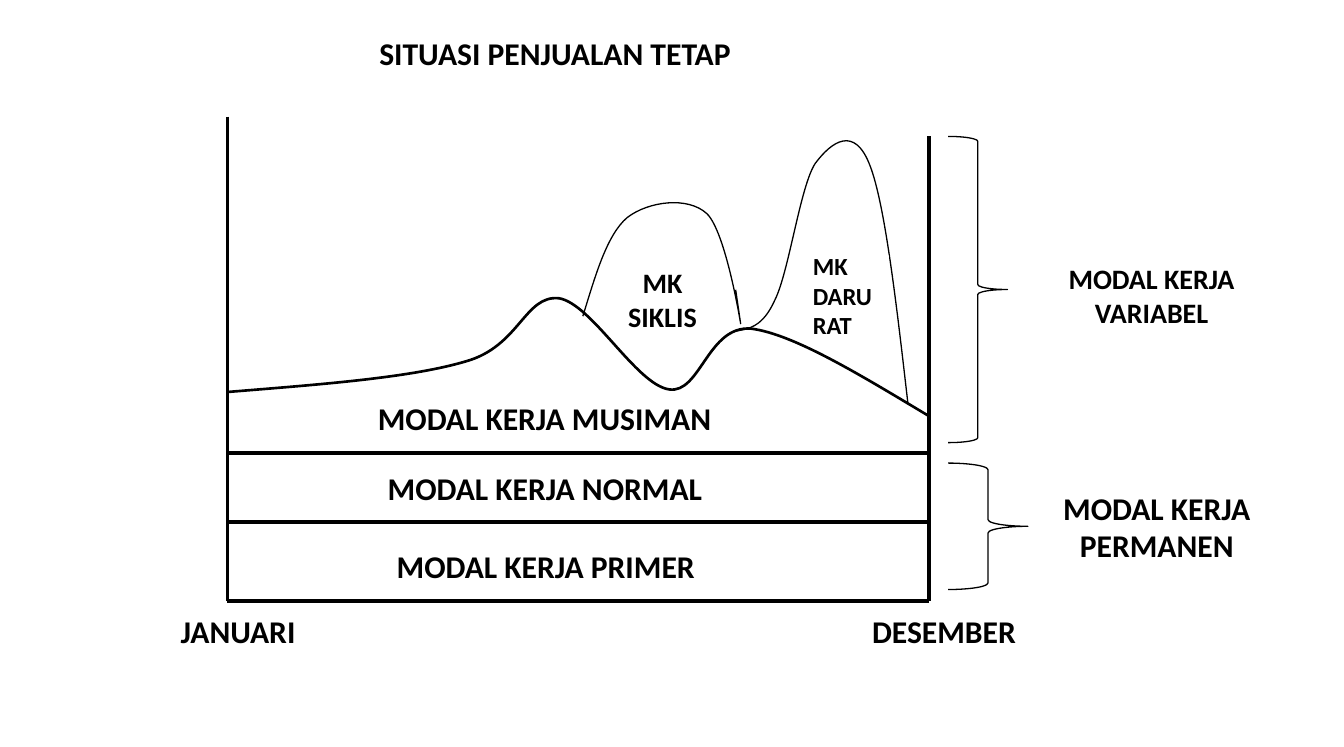
import lxml.etree
import pptx
import pptx.dml.color
import pptx.enum.shapes
import pptx.enum.text
import pptx.oxml.ns
import pptx.util

Cm = pptx.util.Cm
Pt = pptx.util.Pt
qn = pptx.oxml.ns.qn
Shape = pptx.enum.shapes.MSO_SHAPE
Align = pptx.enum.text.PP_ALIGN
BLACK = pptx.dml.color.RGBColor(0, 0, 0)
WHITE = pptx.dml.color.RGBColor(255, 255, 255)

LEFT, RIGHT = 4.57, 18.67
BASE, PRIME, NORMAL = 12.07, 10.49, 9.09

SEASON = [
    (4.6, 7.87), (6.43, 7.72), (8.23, 7.59), (9.35, 7.26),
    (10.44, 6.96), (10.54, 5.92), (11.23, 5.99),
    (11.89, 6.1), (12.78, 7.72), (13.44, 7.82),
    (14.07, 7.92), (14.22, 6.53), (15.09, 6.6),
    (15.95, 6.71), (17.3, 7.54), (18.67, 8.36),
]
CYCLE = [
    (11.71, 6.35), (11.96, 5.54), (12.19, 4.72), (12.6, 4.37),
    (13.03, 4.04), (13.82, 3.94), (14.2, 4.29),
    (14.58, 4.65), (14.88, 6.5), (14.88, 6.5),
    (14.78, 5.82),
]
URGENT = [
    (14.78, 6.65), (15.04, 6.6), (15.32, 6.58), (15.57, 6.02),
    (15.85, 5.46), (16.08, 3.73), (16.38, 3.28),
    (16.71, 2.84), (17.17, 2.51), (17.48, 3.33),
    (17.78, 4.11), (18.01, 6.1), (18.24, 8.1),
]


class Chart:
    def __init__(self, slide):
        self.slide = slide
        self.shapes = slide.shapes
        self.font = {"name": "Calibri", "bold": True}
        self.frame = {
            "word_wrap": True,
            "auto_size": pptx.enum.text.MSO_AUTO_SIZE.NONE,
            "vertical_anchor": pptx.enum.text.MSO_ANCHOR.MIDDLE,
            "margin_right": Cm(0.25),
            "margin_top": Cm(0.13),
            "margin_bottom": Cm(0.13),
        }

    def words(self, shape, text, size, align, inset):
        frame = shape.text_frame
        frame.text = text
        for key, value in {**self.frame, "margin_left": Cm(inset)}.items():
            setattr(frame, key, value)
        for para in frame.paragraphs:
            para.alignment = align
            for key, value in {**self.font, "size": Pt(size)}.items():
                setattr(para.font, key, value)
            para.font.color.rgb = BLACK

    def title(self, text, box, inset):
        shape = self.shapes.title
        for key, value in zip(("left", "top", "width", "height"), box):
            setattr(shape, key, Cm(value))
        self.words(shape, text, 18, Align.LEFT, inset)

    def label(self, text, box, size=18, align=Align.LEFT, inset=0.25):
        shape = self.shapes.add_shape(Shape.RECTANGLE, *map(Cm, box))
        shape.shadow.inherit = False
        shape.fill.solid()
        shape.fill.fore_color.rgb = WHITE
        shape.line.fill.background()
        self.words(shape, text, size, align, inset)

    def stroke(self, shape, width):
        shape.line.color.rgb = BLACK
        shape.line.width = Pt(width)

    def line(self, *ends):
        kind = pptx.enum.shapes.MSO_CONNECTOR.STRAIGHT
        line = self.shapes.add_connector(kind, *map(Cm, ends))
        self.stroke(line, 2.25)
        props = line.element.find(qn("p:spPr"))
        lxml.etree.SubElement(props, qn("a:effectLst"))

    def hollow(self, shape, width):
        shape.shadow.inherit = False
        shape.fill.background()
        self.stroke(shape, width)

    def brace(self, box):
        shape = self.shapes.add_shape(Shape.RIGHT_BRACE, *map(Cm, box))
        self.hollow(shape, 0.75)

    def curve(self, points, width):
        spots = [(Cm(x), Cm(y)) for x, y in points]
        form = self.shapes.build_freeform(*spots[0])
        form.add_line_segments(spots[1:], close=False)
        shape = form.convert_to_shape()
        parts = list(shape.element.iter(qn("a:lnTo")))
        for i in range(0, len(parts) - 2, 3):
            bend = lxml.etree.Element(qn("a:cubicBezTo"))
            parts[i].addprevious(bend)
            for part in parts[i:i + 3]:
                bend.append(part[0])
                part.getparent().remove(part)
        self.hollow(shape, width)


def main():
    deck = pptx.Presentation()
    deck.slide_width, deck.slide_height = Cm(27), Cm(15)
    chart = Chart(deck.slides.add_slide(deck.slide_layouts[5]))
    chart.title("SITUASI PENJUALAN TETAP", (5.36, 0.56, 10.72, 1), 2.26)

    chart.line(LEFT, 2.34, LEFT, BASE)
    chart.line(RIGHT, 2.74, RIGHT, BASE)
    for level in (BASE, PRIME, NORMAL):
        chart.line(LEFT, level, RIGHT, level)

    chart.label("MODAL KERJA PRIMER", (5.56, 10.87, 9.32, 1), inset=2.41)
    chart.label("MODAL KERJA NORMAL", (7.54, 9.3, 7.34, 1))
    chart.curve(SEASON, 1.5)
    chart.label("MODAL KERJA MUSIMAN", (7.34, 7.9, 8.33, 1))
    chart.curve(CYCLE, 0.75)
    chart.curve(URGENT, 0.75)
    chart.label("MK\nSIKLIS", (12.32, 5.31, 1.98, 1.4), 16, Align.CENTER)
    chart.label("MK\nDARURAT", (16.08, 5.13, 1.78, 1.6), 14)

    chart.brace((19.05, 9.3, 1.6, 2.54))
    chart.label("MODAL KERJA PERMANEN", (20.85, 9.68, 4.78, 1.78), 18, Align.CENTER)
    chart.brace((19.05, 2.74, 1.19, 6.15))
    chart.label("MODAL KERJA VARIABEL", (20.85, 5.13, 4.57, 1.6), 16, Align.CENTER)
    for month, left in (("JANUARI", 3.38), ("DESEMBER", 17.27)):
        chart.label(month, (left, 12.27, 3.58, 0.79))

    deck.save("out.pptx")


if __name__ == "__main__":
    main()
